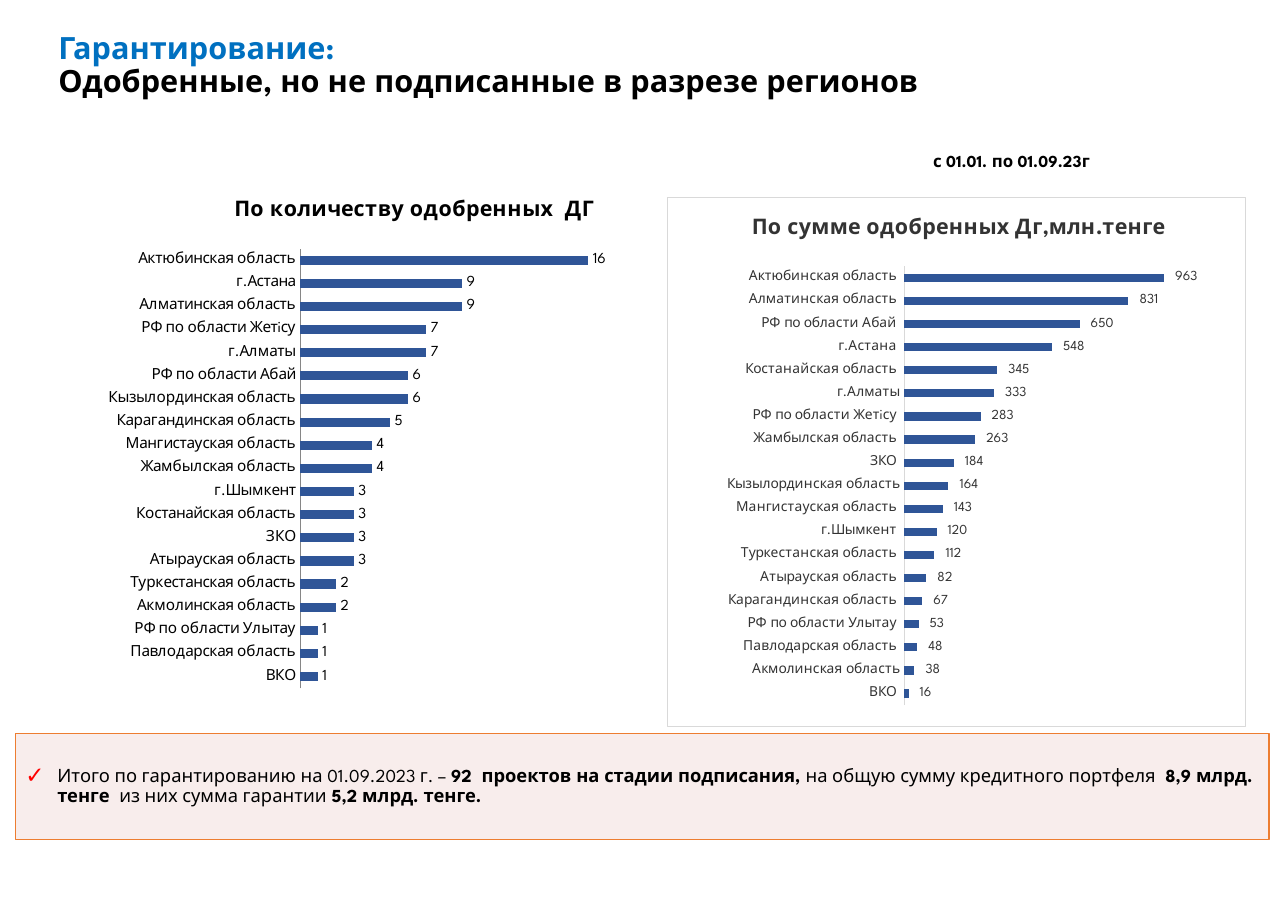
from dataclasses import dataclass

from lxml import etree
from pptx import Presentation
from pptx import util as u
from pptx.chart import data as chart_data
from pptx.dml.color import RGBColor
from pptx.enum import chart as ch, text
from pptx.oxml import parse_xml
from pptx.oxml.ns import nsdecls, qn


@dataclass(frozen=True)
class Theme:
    font: str = "League Spartan"
    chart_font: str = "Calibri"
    black: str = "000000"
    dark: str = "333333"
    heading: str = "0070C0"
    bar: str = "2F5597"
    axis: str = "868686"
    frame: str = "D9D9D9"
    panel: str = "F2DCDB"
    panel_line: str = "ED7D31"
    check: str = "FF0000"
    title_size: int = 20
    chart_title_size: int = 14
    summary_size: int = 12
    date_size: int = 11


theme = Theme()


def style(font, size, color, bold=False, name=theme.font):
    font.size = u.Pt(size)
    font.color.rgb = RGBColor.from_string(color)
    font.bold = bold
    font.name = name


def set_layout(parent, index, **values):
    for old in parent.findall(qn("c:layout")):
        parent.remove(old)
    layout = parse_xml(f"<c:layout {nsdecls('c')}><c:manualLayout/></c:layout>")
    for tag, value in values.items():
        etree.SubElement(layout[0], qn(f"c:{tag}")).set("val", str(value))
    parent.insert(index, layout)


prs = Presentation()
prs.slide_width, prs.slide_height = u.Inches(11.69), u.Inches(8.27)
slide = prs.slides.add_slide(prs.slide_layouts[1])

period = slide.shapes.add_textbox(u.Inches(8.37), u.Inches(1.32), u.Inches(1.72), u.Inches(0.29))
period.text_frame.word_wrap = False
period_run = period.text_frame.paragraphs[0].add_run()
period_run.text = "с 01.01. по 01.09.23г"
style(period_run.font, theme.date_size, theme.black, True)

heading = slide.shapes.title
heading.left, heading.top = u.Inches(0.43), u.Inches(0.25)
heading.width, heading.height = u.Inches(8.1), u.Inches(1.11)
heading.text_frame.auto_size = text.MSO_AUTO_SIZE.NONE
heading.text_frame.vertical_anchor = text.MSO_ANCHOR.TOP
heading_lines = [
    ("Гарантирование:", theme.heading),
    ("Одобренные, но не подписанные в разрезе регионов", theme.black),
]
for number, (line, color) in enumerate(heading_lines):
    paragraph = heading.text_frame.add_paragraph() if number else heading.text_frame.paragraphs[0]
    paragraph.alignment = text.PP_ALIGN.LEFT
    paragraph.line_spacing = 0.9
    run = paragraph.add_run()
    run.text = line
    style(run.font, theme.title_size, color, True)

summary = slide.placeholders[1]
summary.left, summary.top = u.Inches(0.14), u.Inches(6.66)
summary.width, summary.height = u.Inches(11.38), u.Inches(0.96)
summary.fill.solid()
summary.fill.fore_color.rgb = RGBColor.from_string(theme.panel)
panel_color = summary.fill._xPr.find(qn("a:solidFill"))[0]
etree.SubElement(panel_color, qn("a:alpha")).set("val", "50000")
summary.line.color.rgb = RGBColor.from_string(theme.panel_line)
summary.line.width = u.Pt(1)
frame = summary.text_frame
frame.auto_size = text.MSO_AUTO_SIZE.NONE
frame.vertical_anchor = text.MSO_ANCHOR.MIDDLE
frame.margin_left = frame.margin_right = u.Inches(0.08)
frame.margin_top = frame.margin_bottom = u.Inches(0.04)
total = frame.paragraphs[0]
indents = total._p.get_or_add_pPr()
indents.set("marL", str(u.Inches(0.3)))
indents.set("indent", str(u.Inches(-0.29)))
bullet_color = etree.SubElement(indents, qn("a:buClr"))
etree.SubElement(bullet_color, qn("a:srgbClr")).set("val", theme.check)
etree.SubElement(indents, qn("a:buSzPct")).set("val", "125000")
etree.SubElement(indents, qn("a:buChar")).set("char", "✓")
total.line_spacing = 0.9
total.space_before = u.Pt(0)
total.space_after = u.Pt(6)
for words, bold in [
    ("Итого по гарантированию на 01.09.2023 г. – ", False),
    ("92  проектов на стадии подписания, ", True),
    ("на общую сумму кредитного портфеля  ", False),
    ("8,9 млрд. тенге  ", True),
    ("из них сумма гарантии", False),
    (" 5,2 млрд. тенге.", True),
]:
    run = total.add_run()
    run.text = words
    style(run.font, theme.summary_size, theme.black, bold)

count_by_region = {
    "ВКО": 1, "Павлодарская область": 1, "РФ по области Улытау": 1,
    "Акмолинская область": 2, "Туркестанская область": 2, "Атырауская область": 3,
    "ЗКО": 3, "Костанайская область": 3, "г.Шымкент": 3, "Жамбылская область": 4,
    "Мангистауская область": 4, "Карагандинская область": 5,
    "Кызылординская область": 6, "РФ по области Абай": 6, "г.Алматы": 7,
    "РФ по области Жетiсу": 7, "Алматинская область": 9, "г.Астана": 9,
    "Актюбинская область": 16,
}
sum_by_region = {
    " ВКО ": 16, "Акмолинская область": 38, " Павлодарская область ": 48,
    " РФ по области Улытау ": 53, " Карагандинская область ": 67,
    " Атырауская область ": 82, " Туркестанская область ": 112, " г.Шымкент ": 120,
    " Мангистауская область ": 143, "Кызылординская область": 164, " ЗКО ": 184,
    " Жамбылская область ": 263, " РФ по области Жетiсу ": 283, "г.Алматы": 333,
    " Костанайская область ": 345, " г.Астана ": 548, " РФ по области Абай ": 650,
    " Алматинская область ": 831, " Актюбинская область ": 963,
}
sum_format = r'_-* #\ ##0_р_._-;\-* #\ ##0_р_._-;_-* "-"_р_._-'

charts = [
    dict(title="По количеству одобренных  ДГ", values=count_by_region, at=(0.62, 1.68),
         title_at=(0.28, 0.02), plot=(0.4, 0.12, 0.56, 0.83), size=10, color=theme.black,
         axis=theme.axis, gap=150, top=18, format="#,##0", framed=False),
    dict(title="По сумме одобренных Дг,млн.тенге", values=sum_by_region, at=(6.05, 1.79),
         title_at=(0.14, 0.03), plot=(0.41, 0.13, 0.56, 0.83), size=9, color=theme.dark,
         axis=theme.frame, gap=182, top=1200, format=sum_format, framed=True),
]
for part in charts:
    regions = chart_data.CategoryChartData(number_format=part["format"])
    regions.categories = list(part["values"])
    regions.add_series("Series 1", list(part["values"].values()))
    left, top = part["at"]
    chart = slide.shapes.add_chart(
        ch.XL_CHART_TYPE.BAR_CLUSTERED, u.Inches(left), u.Inches(top),
        u.Inches(5.26), u.Inches(4.81), regions).chart
    style(chart.font, 10, theme.black, name=theme.chart_font)
    chart.has_legend = False

    chart.has_title = True
    caption = chart.chart_title.text_frame.paragraphs[0].add_run()
    caption.text = part["title"]
    style(caption.font, theme.chart_title_size, part["color"], True)
    x, y = part["title_at"]
    set_layout(chart.chart_title._element, 1, xMode="edge", yMode="edge", x=x, y=y)
    x, y, w, h = part["plot"]
    set_layout(chart._chartSpace.chart.plotArea, 0, layoutTarget="inner",
               xMode="edge", yMode="edge", x=x, y=y, w=w, h=h)

    region_axis = chart.category_axis
    region_axis.major_tick_mark = ch.XL_TICK_MARK.NONE
    region_axis.has_major_gridlines = False
    region_axis.format.line.color.rgb = RGBColor.from_string(part["axis"])
    region_axis.format.line.width = u.Pt(0.75)
    style(region_axis.tick_labels.font, part["size"], part["color"])
    chart.value_axis.has_major_gridlines = False
    chart.value_axis.minimum_scale = 0
    chart.value_axis.maximum_scale = part["top"]
    chart.value_axis.visible = False

    bars = chart.plots[0]
    bars.gap_width = part["gap"]
    bars.vary_by_categories = False
    bars.series[0].format.fill.solid()
    bars.series[0].format.fill.fore_color.rgb = RGBColor.from_string(theme.bar)
    labels = bars.series[0].data_labels
    labels.show_value = True
    labels.position = ch.XL_LABEL_POSITION.OUTSIDE_END
    labels.number_format = part["format"]
    labels.number_format_is_linked = False
    style(labels.font, part["size"], part["color"])

    if part["framed"]:
        chart._chartSpace.chart.addnext(parse_xml(
            f'<c:spPr {nsdecls("c", "a")}><a:solidFill><a:srgbClr val="FFFFFF"/></a:solidFill>'
            f'<a:ln w="{u.Pt(0.75)}"><a:solidFill><a:srgbClr val="{theme.frame}"/></a:solidFill>'
            '</a:ln></c:spPr>'))

prs.save("out.pptx")
